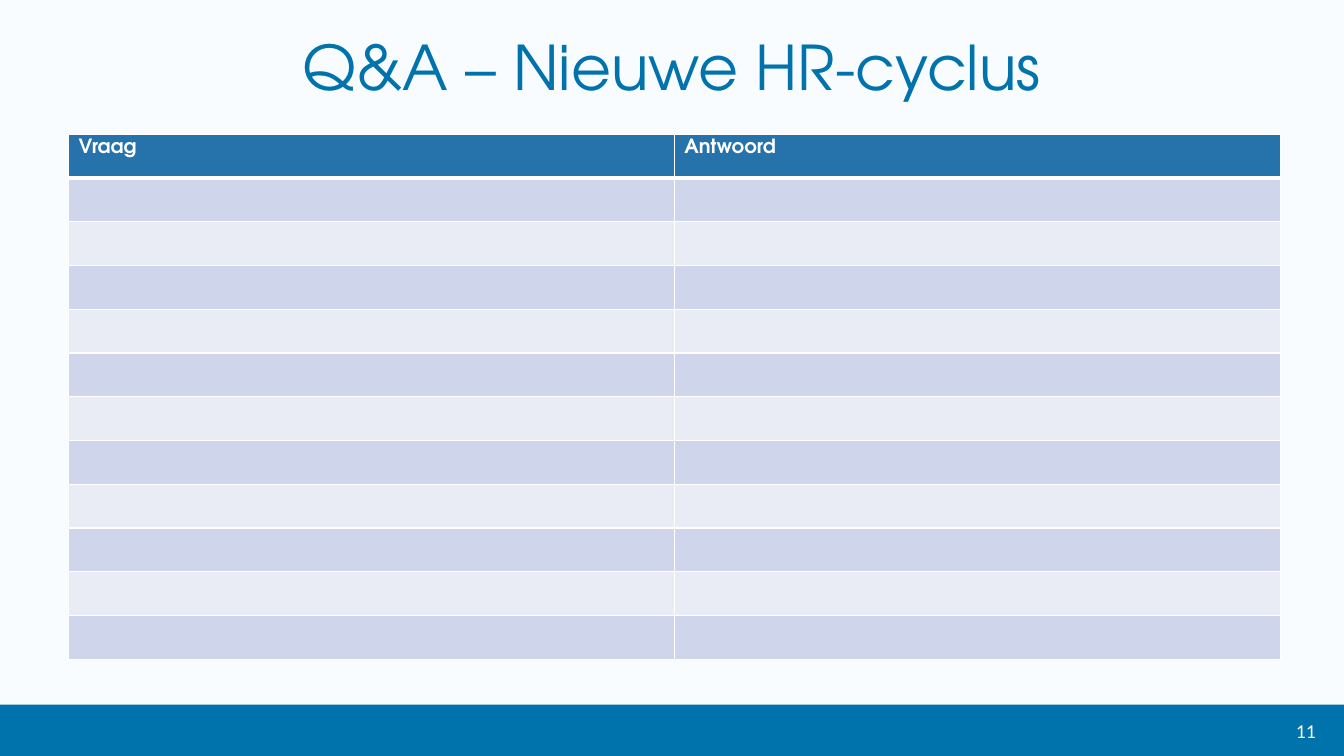
"""Build the Q&A slide with an empty question and answer table."""
from lxml.etree import SubElement
from pptx import Presentation
from pptx.dml.color import RGBColor
from pptx.enum.shapes import MSO_SHAPE
from pptx.enum.text import MSO_ANCHOR, PP_ALIGN
from pptx.oxml.ns import qn
from pptx.util import Pt

COLORS = {
    "background": "F9FCFF",
    "brand": "0073AC",
    "header": "2673AC",
    "odd": "CFD5EA",
    "even": "E9EBF5",
    "white": "FFFFFF",
}
HEADINGS = ["Vraag", "Antwoord"]
ROWS = 12
ROW_HEIGHT = 31.25
COLUMN_WIDTH = 432.7


def style(paragraph, font_name, size, color, bold=False):
    font = paragraph.runs[0].font
    font.name = font_name
    font.size = Pt(size)
    font.bold = bold
    font.color.rgb = RGBColor.from_string(COLORS[color])


def add_border(cell, side, width):
    line = SubElement(cell._tc.get_or_add_tcPr(), qn(f"a:ln{side}"), w=str(Pt(width)))
    fill = SubElement(line, qn("a:solidFill"))
    SubElement(fill, qn("a:srgbClr"), val=COLORS["white"])


prs = Presentation()
prs.slide_width = Pt(960)
prs.slide_height = Pt(540)
slide = prs.slides.add_slide(prs.slide_layouts[6])
slide.background.fill.solid()
slide.background.fill.fore_color.rgb = RGBColor.from_string(COLORS["background"])

footer = slide.shapes.add_shape(MSO_SHAPE.RECTANGLE, 0, Pt(503.3), Pt(960), Pt(36.7))
footer.shadow.inherit = False
footer.fill.solid()
footer.fill.fore_color.rgb = RGBColor.from_string(COLORS["brand"])
footer.line.fill.background()

page_number = slide.shapes.add_textbox(Pt(779), Pt(511.2), Pt(168), Pt(21.6)).text_frame
page_number.word_wrap = True
page_number.vertical_anchor = MSO_ANCHOR.MIDDLE
page_number.text = "11"
page_number.paragraphs[0].alignment = PP_ALIGN.RIGHT
style(page_number.paragraphs[0], "Calibri", 14, "white")

title = slide.shapes.add_textbox(Pt(18.7), Pt(21.6), Pt(922.3), Pt(56.2)).text_frame
title.word_wrap = True
title.margin_left = title.margin_right = Pt(9.4)
title.margin_top = title.margin_bottom = Pt(5)
title.text = "Q&A – Nieuwe HR-cyclus"
title.paragraphs[0].alignment = PP_ALIGN.CENTER
title.paragraphs[0].line_spacing = 0.9
style(title.paragraphs[0], "TeX Gyre Adventor", 44, "brand")

questions = slide.shapes.add_table(
    ROWS, len(HEADINGS), Pt(49), Pt(96), Pt(COLUMN_WIDTH * len(HEADINGS)), Pt(ROW_HEIGHT * ROWS)
).table
for column in questions.columns:
    column.width = Pt(COLUMN_WIDTH)
for r, row in enumerate(questions.rows):
    row.height = Pt(ROW_HEIGHT)
    band = "header" if r == 0 else "odd" if r % 2 else "even"
    for c, cell in enumerate(row.cells):
        cell.margin_top = cell.margin_bottom = Pt(3.6)
        add_border(cell, "L", 1)
        add_border(cell, "R", 1)
        add_border(cell, "T", 3 if r == 1 else 1)
        add_border(cell, "B", 3 if r == 0 else 1)
        cell.fill.solid()
        cell.fill.fore_color.rgb = RGBColor.from_string(COLORS[band])
        if r == 0:
            cell.text_frame.text = HEADINGS[c]
            style(cell.text_frame.paragraphs[0], "TeX Gyre Adventor", 14, "white", bold=True)

prs.save("out.pptx")
